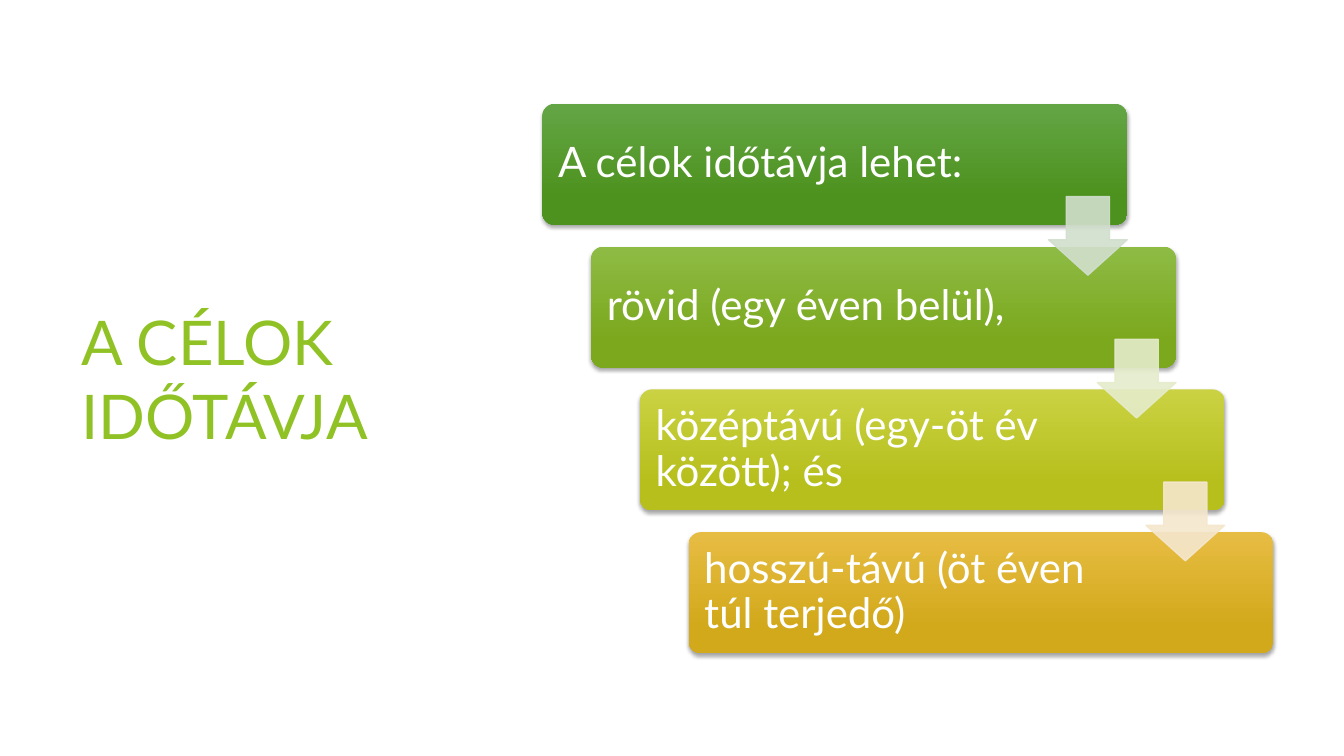
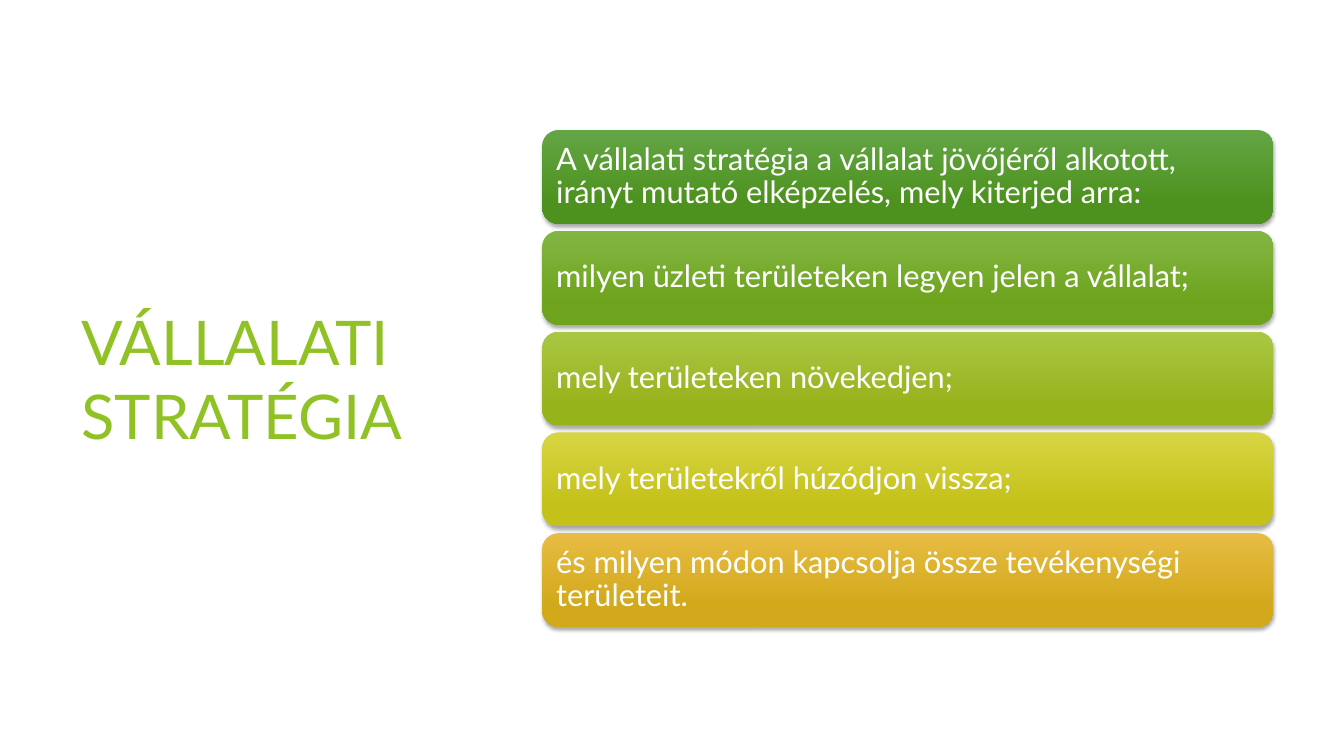
"""Builds two slides on goal horizons and company strategy."""
from dataclasses import dataclass

from lxml import etree
from pptx import Presentation
from pptx.dml.color import RGBColor
from pptx.enum import shapes, text
from pptx.oxml import ns
from pptx.util import Inches, Pt


@dataclass(frozen=True)
class Theme:
    """Colours, font and type sizes of both slides."""
    font: str = "Lato"
    title: str = "90C226"
    label: str = "FFFFFF"
    shadow: str = "000000"
    green: tuple = ("63A545", "4D921E")
    leaf: tuple = ("82B644", "6EA31D")
    grass: tuple = ("8EBB44", "7BA81D")
    moss: tuple = ("AAC744", "97B31C")
    lime: tuple = ("CAD243", "B6BF1B")
    yellow: tuple = ("D8D543", "C4C11A")
    gold: tuple = ("E7BC43", "D2A91B")
    arrows: tuple = ("D1DFCD", "E5ECCB", "F5E7CD")
    title_size: int = 44
    step_size: int = 30
    row_size: int = 22


THEME = Theme()
LEFT, WIDTH = 5.38, 7.25


def add_child(parent, tag, **attributes):
    """Append a drawing element with the given attributes."""
    return etree.SubElement(parent, ns.qn(tag), {key: str(value) for key, value in attributes.items()})


def write(frame, wording, size, color):
    """Write one left-aligned paragraph, centred vertically."""
    frame.word_wrap = True
    frame.vertical_anchor = text.MSO_ANCHOR.MIDDLE
    paragraph = frame.paragraphs[0]
    paragraph.text = wording
    paragraph.alignment = text.PP_ALIGN.LEFT
    paragraph.font.name = THEME.font
    paragraph.font.size = Pt(size)
    paragraph.font.color.rgb = RGBColor.from_string(color)
    return paragraph


def add_titled_slide(deck, title):
    """Add a blank slide with its title on the left."""
    slide = deck.slides.add_slide(deck.slide_layouts[6])
    heading = slide.shapes.add_textbox(Inches(0.71), Inches(1.51), Inches(3.88), Inches(4.48))
    write(heading.text_frame, title, THEME.title_size, THEME.title)
    return slide


def cast_shadow(shape):
    """Give the shape a soft shadow below it."""
    shape.shadow.inherit = False
    effects = shape.element.spPr.find(ns.qn("a:effectLst"))
    shadow = add_child(effects, "a:outerShdw", blurRad=Pt(3), dist=Pt(2), dir=5400000, rotWithShape=0)
    color = add_child(shadow, "a:srgbClr", val=THEME.shadow)
    add_child(color, "a:alpha", val=35000)


def add_panel(slide, box, wording, colors, size, inset, right_inset, corner):
    """Add a rounded panel with a vertical gradient and its text."""
    panel = slide.shapes.add_shape(shapes.MSO_SHAPE.ROUNDED_RECTANGLE, *map(Inches, box))
    panel.adjustments[0] = corner
    panel.line.fill.background()
    panel.fill.gradient()
    panel.fill.gradient_angle = 270
    for stop, color, position in zip(panel.fill.gradient_stops, colors, (0, 0.78)):
        stop.color.rgb = RGBColor.from_string(color)
        stop.position = position
    cast_shadow(panel)
    frame = panel.text_frame
    frame.margin_left = frame.margin_top = frame.margin_bottom = Inches(inset)
    frame.margin_right = Inches(right_inset)
    write(frame, wording, size, THEME.label).line_spacing = 0.9


def add_arrow(slide, left, top, color):
    """Add a slightly transparent arrow pointing down."""
    arrow = slide.shapes.add_shape(
        shapes.MSO_SHAPE.DOWN_ARROW, Inches(left), Inches(top), Inches(0.78), Inches(0.78))
    arrow.adjustments[0], arrow.adjustments[1] = 0.55, 0.45
    arrow.shadow.inherit = False
    arrow.line.width = Pt(1)
    for fill in (arrow.fill, arrow.line.fill):
        fill.solid()
        fill.fore_color.rgb = RGBColor.from_string(color)
    for tint in arrow.element.spPr.iter(ns.qn("a:srgbClr")):
        add_child(tint, "a:alpha", val=90000)


def add_staircase(slide, steps):
    """Add panels stepping down to the right, joined by arrows."""
    top, width, height, total_height = 1.03, 5.8, 1.2, 5.45
    gaps = len(steps) - 1
    shift, drop = (WIDTH - width) / gaps, (total_height - height) / gaps
    corners = [(LEFT + i * shift, top + i * drop) for i in range(len(steps))]
    for (x, y), (wording, colors) in zip(corners, steps):
        add_panel(slide, (x, y, width, height), wording, colors, THEME.step_size, 0.12, 1.39, 0.1)
    for (x, y), color in zip(corners, THEME.arrows):
        add_arrow(slide, x + 5.02, y + 0.92, color)


def add_stack(slide, rows):
    """Add full-width panels one below the other."""
    top, height, pitch = 1.29, 0.93, 1
    for i, (wording, colors) in enumerate(rows):
        box = (LEFT, top + i * pitch, WIDTH, height)
        add_panel(slide, box, wording, colors, THEME.row_size, 0.09, 0.09, 0.17)


def main():
    """Build and save the presentation."""
    deck = Presentation()
    deck.slide_width, deck.slide_height = Inches(13.33), Inches(7.5)
    add_staircase(add_titled_slide(deck, "A CÉLOK IDŐTÁVJA"), [
        ("A célok időtávja lehet:", THEME.green),
        ("rövid (egy éven belül),", THEME.grass),
        ("középtávú (egy-öt év között); és", THEME.lime),
        ("hosszú-távú (öt éven túl terjedő)", THEME.gold),
    ])
    add_stack(add_titled_slide(deck, "VÁLLALATI STRATÉGIA"), [
        ("A vállalati stratégia a vállalat jövőjéről alkotott, irányt mutató elképzelés, "
         "mely kiterjed arra:", THEME.green),
        ("milyen üzleti területeken legyen jelen a vállalat;", THEME.leaf),
        ("mely területeken növekedjen;", THEME.moss),
        ("mely területekről húzódjon vissza;", THEME.yellow),
        ("és milyen módon kapcsolja össze tevékenységi területeit.", THEME.gold),
    ])
    deck.save("out.pptx")


if __name__ == "__main__":
    main()
